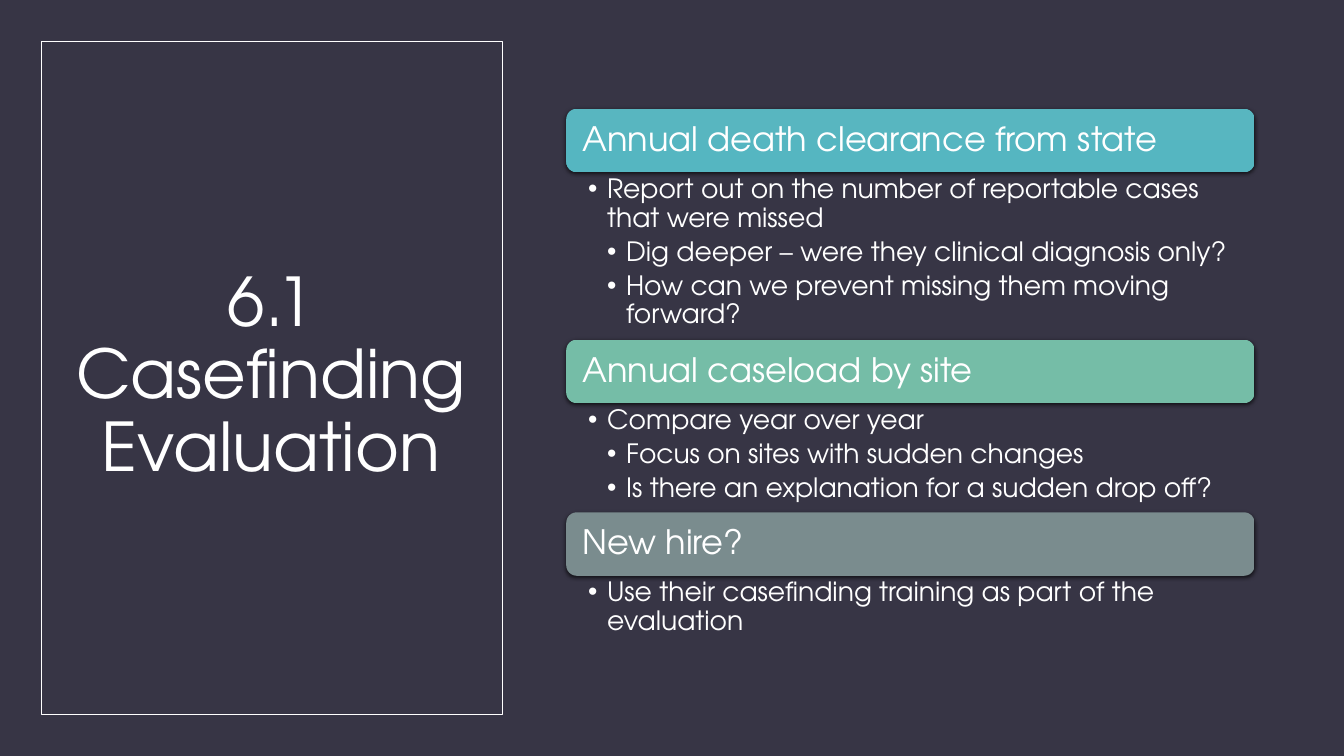
from lxml import etree
from pptx import Presentation, util as u
from pptx.dml.color import RGBColor
from pptx.enum import shapes, text
from pptx.oxml import parse_xml
from pptx.oxml.ns import qn

FONT = "TeX Gyre Adventor"
WHITE = "FFFFFF"
SHADOW = (
    '<a:effectLst xmlns:a="http://schemas.openxmlformats.org/drawingml/2006/main">'
    '<a:outerShdw blurRad="38100" dist="12700" dir="5400000" rotWithShape="0">'
    '<a:srgbClr val="000000"><a:alpha val="63000"/></a:srgbClr>'
    '</a:outerShdw></a:effectLst>')


def tint(color, code):
    color.rgb = RGBColor.from_string(code)


def write(par, words, size, after=0):
    par.line_spacing = 0.9
    par.space_before = u.Pt(0)
    par.space_after = u.Pt(after)
    run = par.add_run()
    run.text = words
    run.font.name = FONT
    run.font.size = u.Pt(size)
    run.font.bold = False
    tint(run.font.color, WHITE)


# Slide and background
deck = Presentation()
deck.slide_width, deck.slide_height = u.Cm(33.87), u.Cm(19.05)
slide = deck.slides.add_slide(deck.slide_layouts.get_by_name("Comparison"))
slide.background.fill.solid()
tint(slide.background.fill.fore_color, "373545")

# Title in its thin frame
title = slide.shapes.title
title.left, title.top = u.Cm(1.6), u.Cm(1.9)
title.width, title.height = u.Cm(10.46), u.Cm(15.21)
frame = title.text_frame
frame.word_wrap = True
frame.auto_size = text.MSO_AUTO_SIZE.NONE
frame.vertical_anchor = text.MSO_ANCHOR.MIDDLE
frame.paragraphs[0].alignment = text.PP_ALIGN.CENTER
write(frame.paragraphs[0], "6.1 Casefinding Evaluation", 48)

border = slide.shapes.add_shape(
    shapes.MSO_SHAPE.RECTANGLE, u.Cm(1.04), u.Cm(1.04), u.Cm(11.61), u.Cm(16.97))
border.shadow.inherit = False
border.fill.background()
tint(border.line.color, WHITE)
border.line.width = u.Pt(0.5)

# Topics: heading, gradient ends, list height, list lines with level
topics = [
    ("Annual death clearance from state", ("58B6C0", "55B6C1"), 4.22, [
        (1, "Report out on the number of reportable cases that were missed"),
        (2, "Dig deeper – were they clinical diagnosis only?"),
        (2, "How can we prevent missing them moving forward?")]),
    ("Annual caseload by site", ("75BDA7", "72BDA6"), 2.75, [
        (1, "Compare year over year"),
        (2, "Focus on sites with sudden changes"),
        (2, "Is there an explanation for a sudden drop off?")]),
    ("New hire?", ("7A8C8E", "788B8D"), 1.65, [
        (1, "Use their casefinding training as part of the evaluation")]),
]
left, width, bar_high, step = u.Cm(14.27), u.Cm(17.35), 1.6, u.Cm(0.48)
top = 2.74
bodies = [b for b in slide.placeholders if 1 <= b.placeholder_format.idx <= 4]

for body, (head, ends, high, lines) in zip(bodies, topics):
    # Heading bar
    bar = slide.shapes.add_shape(
        shapes.MSO_SHAPE.ROUNDED_RECTANGLE, left, u.Cm(top), width, u.Cm(bar_high))
    bar.fill.gradient()
    bar.fill.gradient_angle = 270
    for stop, code in zip(bar.fill.gradient_stops, ends):
        tint(stop.color, code)
    bar.line.fill.background()
    bar._element.spPr.append(parse_xml(SHADOW))
    frame = bar.text_frame
    frame.word_wrap = True
    frame.margin_left = frame.margin_right = u.Cm(0.33)
    frame.vertical_anchor = text.MSO_ANCHOR.MIDDLE
    frame.paragraphs[0].alignment = text.PP_ALIGN.LEFT
    write(frame.paragraphs[0], head, 24)
    top += bar_high

    # Bulleted list
    body.left, body.top, body.width, body.height = left, u.Cm(top), width, u.Cm(high)
    frame = body.text_frame
    frame.word_wrap = True
    frame.auto_size = text.MSO_AUTO_SIZE.NONE
    frame.vertical_anchor = text.MSO_ANCHOR.TOP
    frame.margin_left, frame.margin_right = u.Cm(0.55), u.Cm(0.48)
    frame.margin_top = frame.margin_bottom = u.Cm(0.08)
    for row, (level, words) in enumerate(lines):
        par = frame.add_paragraph() if row else frame.paragraphs[0]
        par.level = level
        write(par, words, 19, 3.8)
        props = par._p.get_or_add_pPr()
        props.set("marL", str(level * step))
        props.set("indent", str(-step))
        etree.SubElement(props, qn("a:buFont"), typeface="Arial")
        etree.SubElement(props, qn("a:buChar"), char="•")
    top += high

# Drop the spare placeholder
spare = bodies[-1]._element
spare.getparent().remove(spare)

deck.save("out.pptx")
